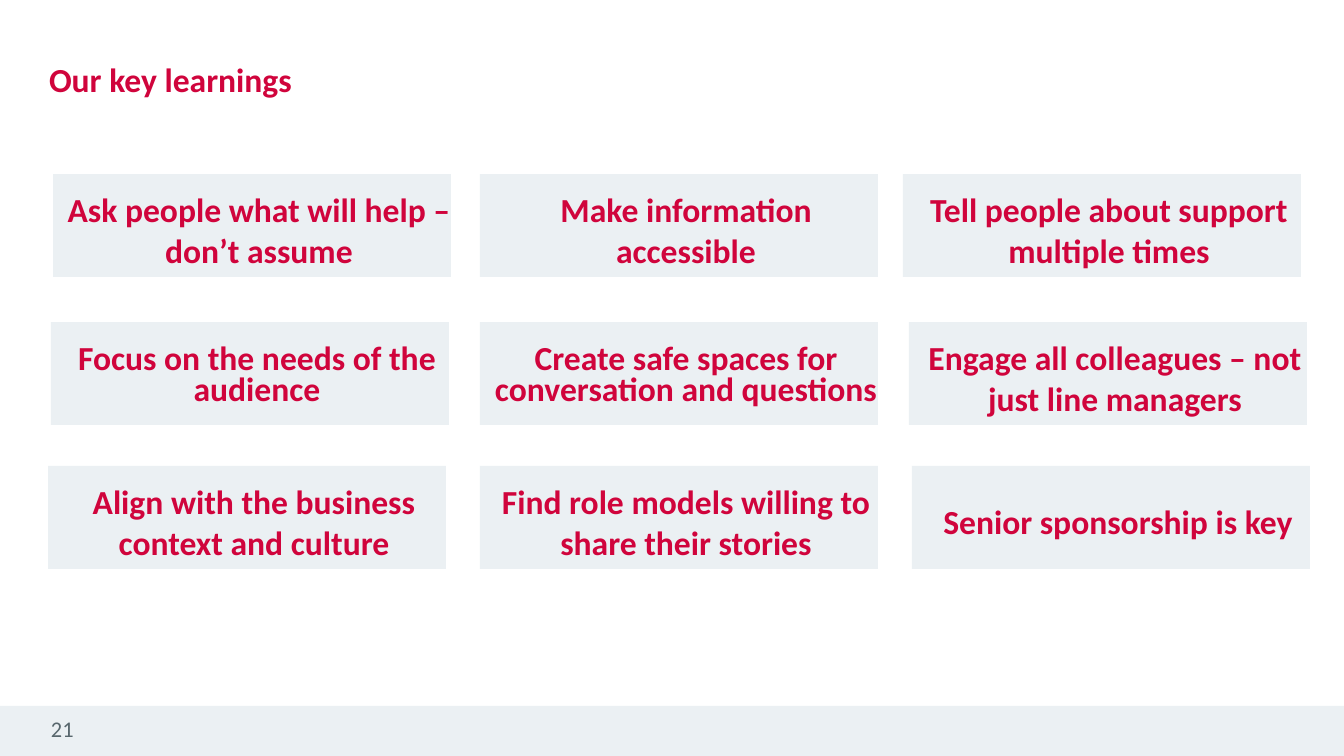
"""Build the slide of key learnings as a grid of nine cards."""
from pptx import Presentation
from pptx.dml.color import RGBColor
from pptx.enum.shapes import MSO_SHAPE
from pptx.enum.text import MSO_ANCHOR, MSO_AUTO_SIZE, PP_ALIGN
from pptx.util import Emu, Pt

TITLE = "Our key learnings"
PAGE = "21"
ROWS = [
    {"top": 174, "lefts": (53, 480, 903), "spacing": (None, None, None),
     "texts": ("Ask people what will help – don’t assume",
               "Make information accessible",
               "Tell people about support multiple times")},
    {"top": 322, "lefts": (51, 480, 909), "spacing": (22, 22, None),
     "texts": ("Focus on the needs of the audience",
               "Create safe spaces for conversation and questions",
               "Engage all colleagues – not just line managers")},
    {"top": 466, "lefts": (48, 480, 912), "spacing": (None, None, None),
     "texts": ("Align with the business context and culture",
               "Find role models willing to share their stories",
               "Senior sponsorship is key")},
]
RED, GREY, PALE = "D0043C", "58676D", "EBF0F3"
WIDTH, HEIGHT = 1344, 756
CARD_W, CARD_H = 398, 103
FOOTER_H = 50


def px(n):
    return Emu(round(n * 914400 / 100.8))


def rgb(value):
    return RGBColor.from_string(value)


def write(sp, text, size=24, color=RED, bold=True, align=PP_ALIGN.LEFT,
          anchor=MSO_ANCHOR.TOP, spacing=None, inset=(0, 0)):
    tf = sp.text_frame
    tf.word_wrap = True
    tf.auto_size = MSO_AUTO_SIZE.NONE
    tf.vertical_anchor = anchor
    tf.margin_left, tf.margin_top = map(px, inset)
    tf.margin_right = tf.margin_bottom = 0
    p = tf.paragraphs[0]
    p.alignment = align
    if spacing:
        p.line_spacing = Pt(spacing)
    r = p.add_run()
    r.text = text
    r.font.name = "Calibri"
    r.font.size = Pt(size)
    r.font.bold = bold
    r.font.color.rgb = rgb(color)


def add_panel(s, *box):
    sp = s.shapes.add_shape(MSO_SHAPE.RECTANGLE, *map(px, box))
    sp.shadow.inherit = False
    sp.fill.solid()
    sp.fill.fore_color.rgb = rgb(PALE)
    sp.line.fill.background()
    return sp


def main():
    prs = Presentation()
    prs.slide_width, prs.slide_height = px(WIDTH), px(HEIGHT)
    s = prs.slides.add_slide(prs.slide_layouts[5])

    title = s.shapes.title
    title.left, title.top, title.width, title.height = map(px, (49, 59, 1252, 72))
    write(title, TITLE, spacing=28.8)

    add_panel(s, 0, HEIGHT - FOOTER_H, WIDTH, FOOTER_H)
    number = s.shapes.add_textbox(*map(px, (51, 715, 40, 28)))
    write(number, PAGE, size=16, color=GREY, bold=False)

    for row in ROWS:
        for left, text, spacing in zip(row["lefts"], row["texts"], row["spacing"]):
            card = add_panel(s, left, row["top"], CARD_W, CARD_H)
            write(card, text, align=PP_ALIGN.CENTER, anchor=MSO_ANCHOR.MIDDLE,
                  spacing=spacing, inset=(14, 8))

    prs.save("out.pptx")


if __name__ == "__main__":
    main()
